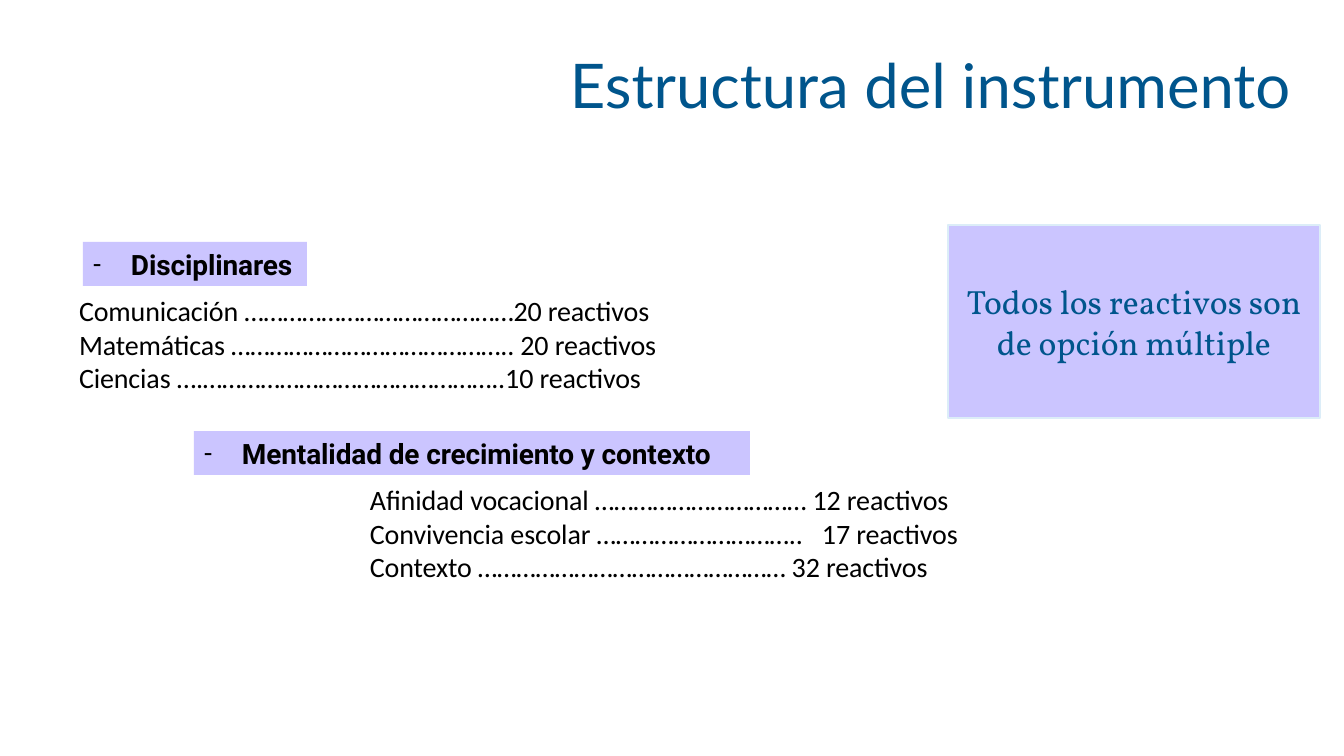
from dataclasses import dataclass

from lxml import etree
from pptx import Presentation
from pptx.dml.color import RGBColor
from pptx.enum.shapes import MSO_SHAPE
from pptx.enum.text import MSO_ANCHOR, PP_ALIGN
from pptx.oxml.ns import qn
from pptx.util import Pt

TITLE = "Estructura del instrumento"
TITLE_BOX = (548, 46, 765, 86)
NOTE = "Todos los reactivos son de opción múltiple"
NOTE_BOX = (948, 225, 372, 193)
SECTIONS = [
    {
        "heading": "Disciplinares",
        "heading_box": (83, 242, 224, 44),
        "items": [
            "Comunicación ……………………………………20 reactivos",
            "Matemáticas …………………………………….. 20 reactivos",
            "Ciencias ….………………………………………..10 reactivos",
        ],
        "items_left": 79,
    },
    {
        "heading": "Mentalidad de crecimiento y contexto",
        "heading_box": (194, 431, 556, 44),
        "items": [
            "Afinidad vocacional …………………………… 12 reactivos",
            "Convivencia escolar …………………………..\t17 reactivos",
            "Contexto ………………………………………… 32 reactivos",
        ],
        "items_left": 370,
    },
]

LEFT, CENTER = PP_ALIGN.LEFT, PP_ALIGN.CENTER
MIDDLE = MSO_ANCHOR.MIDDLE
RECTANGLE = MSO_SHAPE.RECTANGLE

EMU_PER_PX = 914400 / 100.8
SLIDE_SIZE = (1344, 756)
INSET_X, INSET_Y = 10, 5
BULLET_INDENT = 38
ITEMS_SIZE = (640, 112)
ITEMS_GAP = 2
COUNT_TAB = 452


@dataclass(frozen=True)
class Theme:
    blue: RGBColor = RGBColor(0x00, 0x55, 0x8C)
    black: RGBColor = RGBColor(0x00, 0x00, 0x00)
    lilac: RGBColor = RGBColor(0xCB, 0xC5, 0xFF)
    border: RGBColor = RGBColor(0xDC, 0xED, 0xF8)
    title_size: int = 44
    note_size: int = 24
    body_size: int = 20
    title_font: str = "Lato"
    note_font: str = "Vollkorn"
    heading_font: str = "Roboto"
    body_font: str = "Calibri"
    tight: int = -10


THEME = Theme()


def px(value):
    return round(value * EMU_PER_PX)


def place(box):
    return [px(value) for value in box]


def prepare_frame(shape, inset_x=INSET_X):
    frame = shape.text_frame
    frame.word_wrap = True
    frame.vertical_anchor = MIDDLE
    frame.margin_left = frame.margin_right = px(inset_x)
    frame.margin_top = frame.margin_bottom = px(INSET_Y)
    return frame


def add_text(paragraph, text, font, size, color, align=LEFT, bold=False, spacing=0):
    paragraph.alignment = align
    run = paragraph.add_run()
    run.text = text
    run.font.name = font
    run.font.size = Pt(size)
    run.font.bold = bold
    run.font.color.rgb = color
    if spacing:
        run._r.get_or_add_rPr().set("spc", str(spacing))


def add_panel(slide, box, border=None):
    shape = slide.shapes.add_shape(RECTANGLE, *place(box))
    shape.shadow.inherit = False
    shape.fill.solid()
    shape.fill.fore_color.rgb = THEME.lilac
    if border is None:
        shape.line.fill.background()
    else:
        shape.line.color.rgb = border
        shape.line.width = Pt(1.5)
    return prepare_frame(shape)


def add_dash(paragraph):
    properties = paragraph._p.get_or_add_pPr()
    properties.set("marL", str(px(BULLET_INDENT)))
    properties.set("indent", str(-px(BULLET_INDENT)))
    etree.SubElement(properties, qn("a:buFont"), typeface=THEME.body_font)
    etree.SubElement(properties, qn("a:buChar"), char="-")


def add_count_tab(paragraph):
    properties = paragraph._p.get_or_add_pPr()
    tabs = etree.SubElement(properties, qn("a:tabLst"))
    etree.SubElement(tabs, qn("a:tab"), pos=str(px(COUNT_TAB)), algn="l")


def add_section(slide, section):
    left, top, width, height = section["heading_box"]
    heading = add_panel(slide, section["heading_box"]).paragraphs[0]
    add_dash(heading)
    add_text(heading, section["heading"], THEME.heading_font, THEME.body_size,
             THEME.black, bold=True, spacing=THEME.tight)

    items_box = (section["items_left"], top + height + ITEMS_GAP, *ITEMS_SIZE)
    frame = prepare_frame(slide.shapes.add_textbox(*place(items_box)), inset_x=0)
    for index, item in enumerate(section["items"]):
        paragraph = frame.add_paragraph() if index else frame.paragraphs[0]
        if "\t" in item:
            add_count_tab(paragraph)
        add_text(paragraph, item, THEME.body_font, THEME.body_size,
                 THEME.black, spacing=THEME.tight)


def main():
    presentation = Presentation()
    presentation.slide_width, presentation.slide_height = place(SLIDE_SIZE)
    slide = presentation.slides.add_slide(presentation.slide_layouts[6])

    title = prepare_frame(slide.shapes.add_textbox(*place(TITLE_BOX))).paragraphs[0]
    title.line_spacing = 0.9
    add_text(title, TITLE, THEME.title_font, THEME.title_size, THEME.blue, CENTER)

    for section in SECTIONS:
        add_section(slide, section)

    note = add_panel(slide, NOTE_BOX, THEME.border).paragraphs[0]
    add_text(note, NOTE, THEME.note_font, THEME.note_size, THEME.blue, CENTER)

    presentation.save("out.pptx")


if __name__ == "__main__":
    main()
